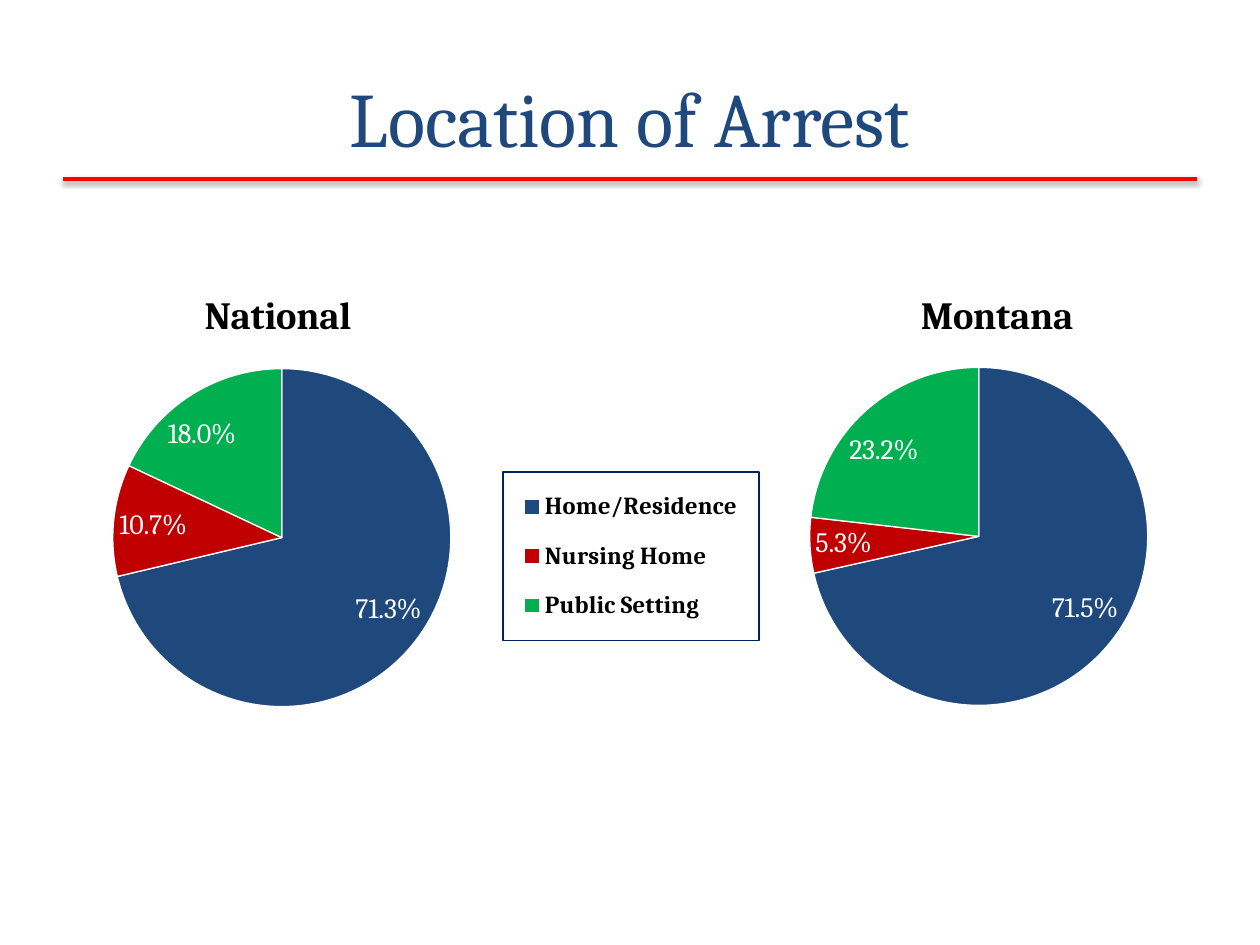
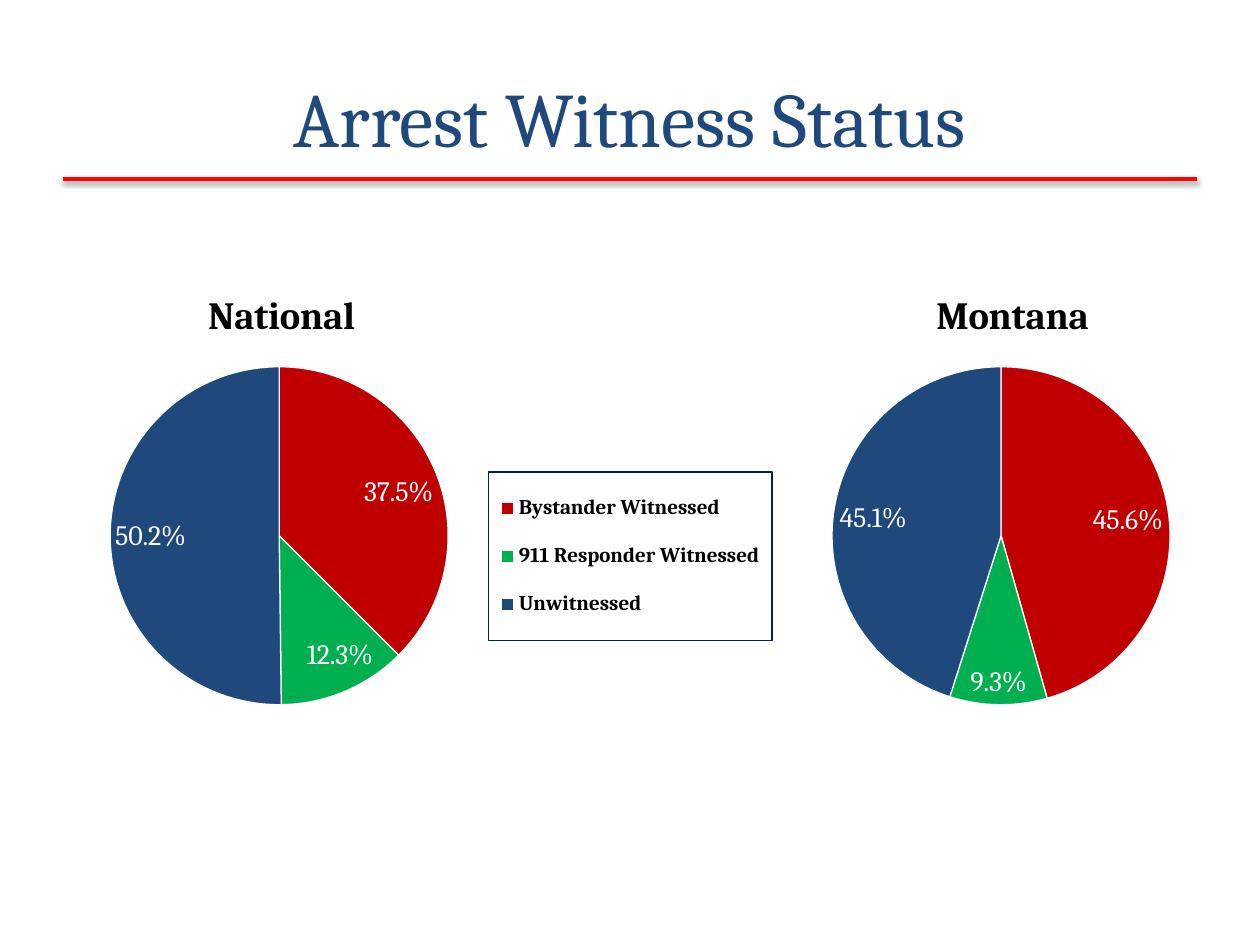
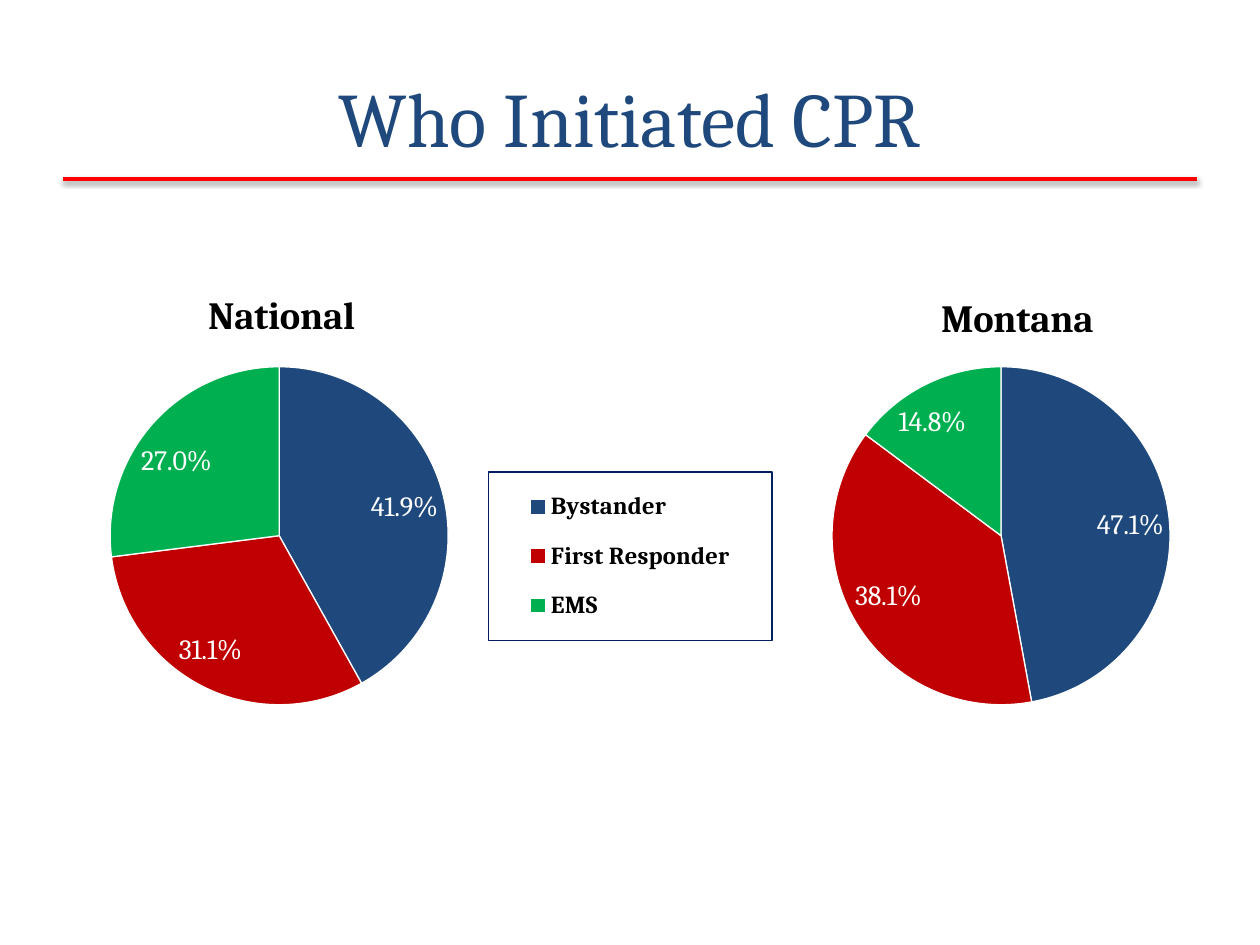
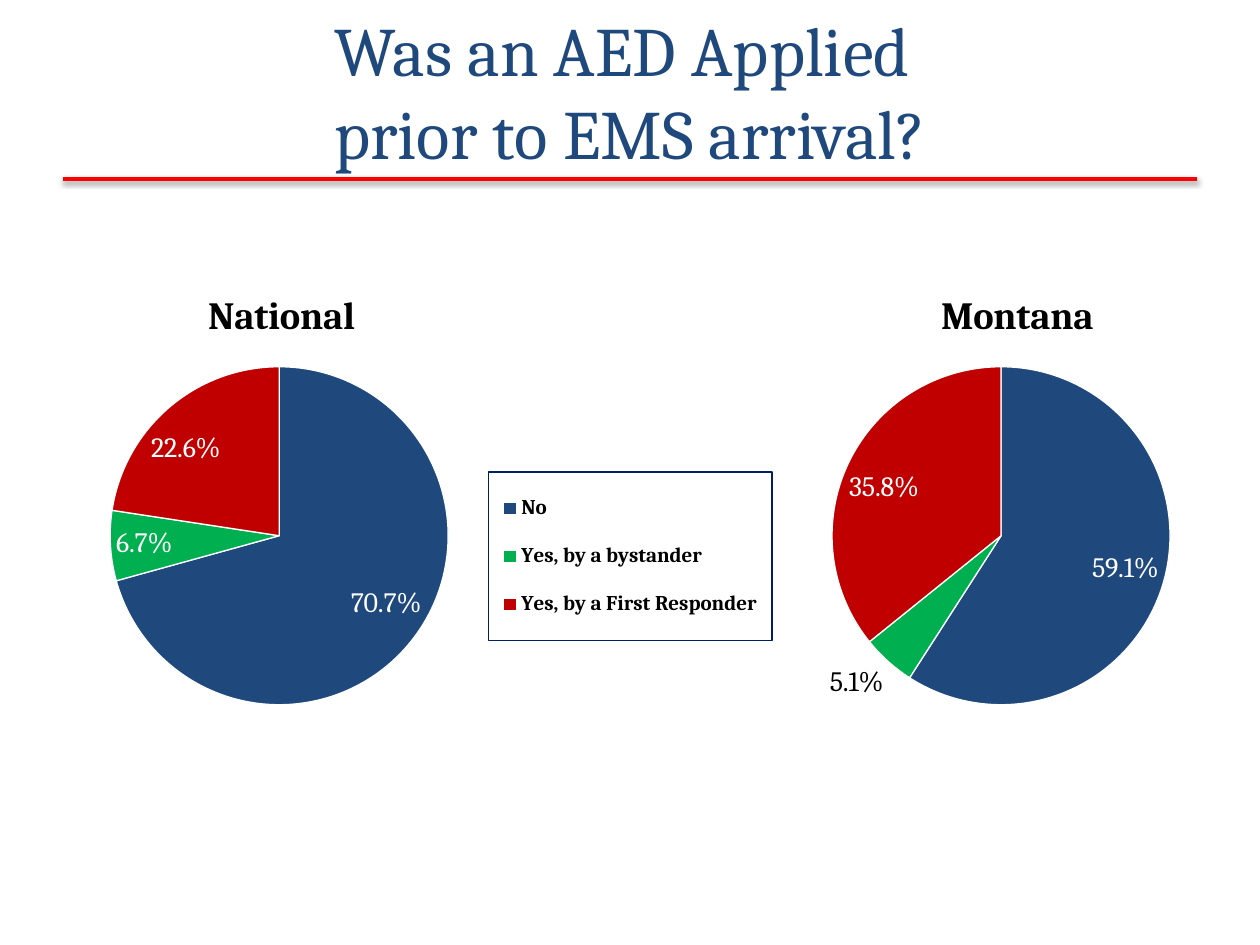
from dataclasses import dataclass
from typing import Any

from pptx import Presentation, oxml
from pptx import util as u
from pptx.chart import data
from pptx.dml import color
from pptx.enum import chart as kinds
from pptx.enum import shapes, text
from pptx.oxml import ns

FACE = "Cambria"
NAVY, RED, GREEN = "1F497D", "C00000", "00B050"
WHITE, BLACK, RULE, FRAME = "FFFFFF", "000000", "FF0000", "002060"
SPOT = kinds.XL_LABEL_POSITION


@dataclass(frozen=True)
class Box:
    left: float
    top: float
    width: float = 0
    height: float = 0

    def points(self) -> list[u.Length]:
        return [u.Pt(n) for n in (self.left, self.top, self.width, self.height)]


@dataclass(frozen=True)
class Pie:
    title: str
    box: Box
    plot: Box
    head: Box
    names: tuple[str, ...]
    vals: tuple[float, ...]
    tints: tuple[str, ...]
    key: Box | None = None
    size: float = 14
    out: int | None = None


@dataclass(frozen=True)
class Page:
    title: str
    pies: tuple[Pie, Pie]
    top: float = 21.6
    size: float = 44


def paint(part: Any, tint: str) -> None:
    part.rgb = color.RGBColor.from_string(tint)


def style(item: Any, **vals: Any) -> None:
    for name, val in vals.items():
        setattr(item, name, val)


def write(font: Any, size: float, tint: str, bold: bool = False) -> None:
    style(font, name=FACE, size=u.Pt(size), bold=bold)
    paint(font.color, tint)


def node(tag: str, body: str = "", attrs: str = "") -> Any:
    return oxml.parse_xml(f"<{tag} {ns.nsdecls('a', 'c')} {attrs}>{body}</{tag}>")


def place(part: Any, spot: int, box: Box, inner: bool = False) -> None:
    for old in part.findall(ns.qn("c:layout")):
        part.remove(old)
    vals = {"layoutTarget": "inner"} if inner else {}
    vals |= {"xMode": "edge", "yMode": "edge", "x": box.left, "y": box.top}
    if box.width:
        vals |= {"w": box.width, "h": box.height}
    body = "".join(f'<c:{name} val="{val}"/>' for name, val in vals.items())
    part.insert(spot, node("c:layout", f"<c:manualLayout>{body}</c:manualLayout>"))


def add_rule(slide: Any) -> None:
    ends = [u.Pt(n) for n in (36, 102.2, 684, 102.2)]
    rule = slide.shapes.add_connector(shapes.MSO_CONNECTOR.STRAIGHT, *ends)
    rule.line.width = u.Pt(2)
    paint(rule.line.fill_color if hasattr(rule.line, "fill_color") else rule.line.color, RULE)
    shade = (
        f'<a:outerShdw blurRad="{u.Pt(3.1)}" dist="{u.Pt(1.6)}" dir="5400000" rotWithShape="0">'
        f'<a:srgbClr val="{BLACK}"><a:alpha val="38000"/></a:srgbClr></a:outerShdw>'
    )
    rule._element.spPr.append(node("a:effectLst", shade))


def add_title(slide: Any, page: Page) -> None:
    frame = slide.shapes.add_textbox(*Box(36, page.top, 648, 90).points()).text_frame
    style(frame, word_wrap=True, vertical_anchor=text.MSO_ANCHOR.MIDDLE)
    line = frame.paragraphs[0]
    style(line, text=page.title, alignment=text.PP_ALIGN.CENTER)
    for run in line.runs:
        write(run.font, page.size, NAVY)


def add_key(chart: Any, pie: Pie) -> None:
    key = chart.legend
    style(key, position=kinds.XL_LEGEND_POSITION.RIGHT, include_in_layout=False)
    write(key.font, pie.size, BLACK, True)
    part = key._element
    place(part, 1, pie.key)
    edge = (
        f'<a:ln w="{u.Pt(1)}"><a:solidFill><a:srgbClr val="{FRAME}"/></a:solidFill></a:ln>'
    )
    part.find(ns.qn("c:txPr")).addprevious(node("c:spPr", edge))


def push_out(label: Any) -> None:
    write(label.font, 16, BLACK)
    label.position = SPOT.OUTSIDE_END
    part = label._dLbl
    part.insert(1, node("c:numFmt", attrs='formatCode="0.0%" sourceLinked="0"'))
    for name, val in {"showVal": "0", "showPercent": "1"}.items():
        part.find(ns.qn(f"c:{name}")).set("val", val)


def add_pie(slide: Any, pie: Pie) -> None:
    facts = data.CategoryChartData()
    facts.categories = pie.names
    facts.add_series("Series 1", pie.vals)
    kind = kinds.XL_CHART_TYPE.PIE
    chart = slide.shapes.add_chart(kind, *pie.box.points(), facts).chart
    write(chart.font, 18, BLACK)
    style(chart, has_title=True, has_legend=pie.key is not None)
    head = chart.chart_title
    head.text_frame.text = pie.title
    write(head.text_frame.paragraphs[0].runs[0].font, 22, BLACK, True)
    place(head._element, 1, pie.head)
    place(chart._chartSpace.chart.plotArea, 0, pie.plot, True)
    if pie.key:
        add_key(chart, pie)
    plot = chart.plots[0]
    plot.vary_by_categories = True
    series = plot.series[0]
    for spot, tint in enumerate(pie.tints):
        form = series.points[spot].format
        form.fill.solid()
        paint(form.fill.fore_color, tint)
        form.line.width = u.Pt(0.75)
        paint(form.line.color, WHITE)
    tags = series.data_labels
    style(
        tags,
        show_percentage=True,
        show_value=False,
        number_format="0.0%",
        number_format_is_linked=False,
        position=SPOT.BEST_FIT,
    )
    write(tags.font, 16, WHITE)
    if pie.out is not None:
        push_out(series.points[pie.out].data_label)


PLAIN = ("1", "2", "3")
FIRST = Box(0.1, 0.28, 0.55, 0.54)
PLOT = Box(0.095, 0.273, 0.548, 0.542)
FIRST = Box(0.103, 0.276, 0.548, 0.542)
HEAD = Box(0.27, 0.14)
LEFT = Box(-6.5, 112.3, 450, 356.4)
RIGHT = Box(406, 112.3, 450, 356.4)
KEY = Box(0.635, 0.442, 0.36, 0.27)
MIX = (NAVY, RED, GREEN)
SEEN = (RED, GREEN, NAVY)
USED = (NAVY, GREEN, RED)


def pair(
    names: tuple[str, ...],
    tints: tuple[str, ...],
    ours: tuple[float, ...],
    state: tuple[float, ...],
    size: float,
    head: Box,
    out: int | None = None,
) -> tuple[Pie, Pie]:
    return (
        Pie("National", LEFT, PLOT, HEAD, names, ours, tints, KEY, size),
        Pie("Montana", RIGHT, PLOT, head, PLAIN, state, tints, out=out),
    )


PLACES = ("Home/Residence", "Nursing Home", "Public Setting")
PAGES = (
    Page(
        "Location of Arrest",
        (
            Pie(
                "National", Box(-8.6, 112.3, 450, 356.4), FIRST, HEAD, PLACES,
                (71.3, 10.7, 18), MIX, Box(0.658, 0.442, 0.325, 0.27),
            ),
            Pie(
                "Montana", Box(419.8, 111.6, 370, 356.4), FIRST, Box(0.277, 0.142), PLAIN,
                (71.5, 5.3, 23.2), MIX,
            ),
        ),
    ),
    Page(
        "Arrest Witness Status",
        pair(
            ("Bystander Witnessed", "911 Responder Witnessed", "Unwitnessed"), SEEN,
            (37.5, 12.3, 50.2), (45.6, 9.3, 45.1), 12, Box(0.278, 0.14),
        ),
    ),
    Page(
        "Who Initiated CPR",
        pair(
            ("Bystander", "First Responder", "EMS"), MIX,
            (41.9, 31.1, 27), (47.1, 38.1, 14.8), 14, Box(0.284, 0.144),
        ),
    ),
    Page(
        "Was an AED Applied \vprior to EMS arrival?",
        pair(
            ("No", "Yes, by a bystander", "Yes, by a First Responder"), USED,
            (70.7, 6.7, 22.6), (59.1, 5.1, 35.8), 12, Box(0.284, 0.14), 1,
        ),
        6.5,
        39.6,
    ),
)


def main() -> None:
    deck = Presentation()
    style(deck, slide_width=u.Pt(720), slide_height=u.Pt(540))
    for page in PAGES:
        slide = deck.slides.add_slide(deck.slide_layouts[6])
        add_rule(slide)
        add_title(slide, page)
        for pie in page.pies:
            add_pie(slide, pie)
    deck.save("out.pptx")


if __name__ == "__main__":
    main()
